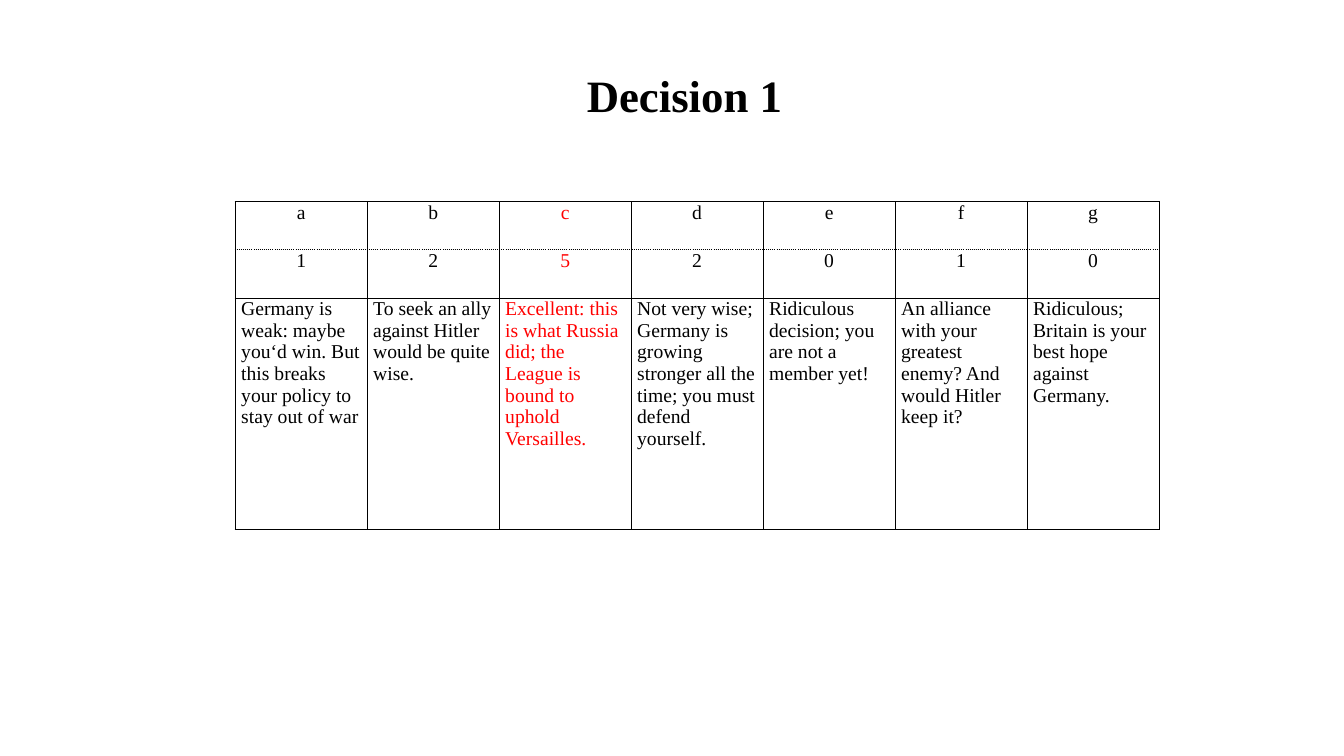
"""Build the "Decision 1" slide: a title above a table of scored options."""
from dataclasses import dataclass

from lxml import etree
from pptx import Presentation
from pptx.dml.color import RGBColor
from pptx.enum.text import MSO_ANCHOR, MSO_AUTO_SIZE, PP_ALIGN
from pptx.oxml.ns import qn
from pptx.util import Inches, Pt

CENTER, LEFT = PP_ALIGN.CENTER, PP_ALIGN.LEFT
TOP = MSO_ANCHOR.TOP
NO_RESIZE = MSO_AUTO_SIZE.NONE

TITLE_ONLY = 5
GRID_COLUMNS, GRID_ROWS = 160, 90
SLIDE_WIDTH, SLIDE_HEIGHT = Inches(13.33), Inches(7.5)
FONT = "Times New Roman"
BLACK, RED = "000000", "FF0000"
ROW_HEIGHTS = (5.75, 5.75, 27.5)
BORDER_TAGS = ("a:lnL", "a:lnR", "a:lnT", "a:lnB")
DOTTED_SIDES = {(0, "a:lnB"), (1, "a:lnT")}


@dataclass(frozen=True)
class Option:
    """One choice, its score and the comment on it."""
    letter: str
    score: int
    comment: str
    color: str = BLACK


OPTIONS = (
    Option("a", 1, "Germany is weak: maybe you‘d win. But this breaks your policy to stay out of war"),
    Option("b", 2, "To seek an ally against Hitler would be quite wise."),
    Option("c", 5, "Excellent: this is what Russia did; the League is bound to uphold Versailles.", RED),
    Option("d", 2, "Not very wise; Germany is growing stronger all the time; you must defend yourself."),
    Option("e", 0, "Ridiculous decision; you are not a member yet!"),
    Option("f", 1, "An alliance with your greatest enemy? And would Hitler keep it?"),
    Option("g", 0, "Ridiculous; Britain is your best hope against Germany."),
)


def across(columns: float) -> int:
    """Return the width of a number of grid columns."""
    return round(SLIDE_WIDTH * columns / GRID_COLUMNS)


def down(rows: float) -> int:
    """Return the height of a number of grid rows."""
    return round(SLIDE_HEIGHT * rows / GRID_ROWS)


def rgb(value: str) -> RGBColor:
    """Return the colour for a hex string."""
    return RGBColor.from_string(value)


def apply(target, values: dict) -> None:
    """Set each named attribute of the target."""
    for name, value in values.items():
        setattr(target, name, value)


def write(para, text: str, size: float, color: str, align, bold: bool = False) -> None:
    """Write one formatted span into a paragraph."""
    para.alignment = align
    span = para.add_run()
    span.text = text
    apply(span.font, {"name": FONT, "size": Pt(size), "bold": bold})
    span.font.color.rgb = rgb(color)


def add_border(cell, tag: str, dash: str) -> None:
    """Draw one side of a cell as a thin black line."""
    properties = cell._tc.get_or_add_tcPr()
    line = etree.SubElement(properties, qn(tag), w=str(Pt(1)))
    fill = etree.SubElement(line, qn("a:solidFill"))
    etree.SubElement(fill, qn("a:srgbClr"), val=BLACK)
    etree.SubElement(line, qn("a:prstDash"), val=dash)


def add_title(slide) -> None:
    """Place and format the slide title."""
    title = slide.shapes.title
    apply(title, {"left": across(31), "top": down(7), "width": across(101), "height": down(14)})
    apply(title.text_frame, {"vertical_anchor": TOP, "auto_size": NO_RESIZE,
                             "word_wrap": True, "margin_top": down(1)})
    write(title.text_frame.paragraphs[0], "Decision 1", 32, BLACK, CENTER, True)


def fill_cell(cell, row: int, text: str, color: str) -> None:
    """Write and outline one table cell."""
    apply(cell, {"margin_left": Inches(0.06), "margin_right": Inches(0.06),
                 "margin_top": 0, "margin_bottom": 0, "vertical_anchor": TOP})
    write(cell.text_frame.paragraphs[0], text, 14, color, LEFT if row == 2 else CENTER)
    for tag in BORDER_TAGS:
        add_border(cell, tag, "sysDot" if (row, tag) in DOTTED_SIDES else "solid")
    cell.fill.background()


def add_options(slide) -> None:
    """Add the table with one column for each option."""
    frame = slide.shapes.add_table(len(ROW_HEIGHTS), len(OPTIONS), across(28), down(24),
                                   across(110), down(sum(ROW_HEIGHTS)))
    table = frame.table
    apply(table, {"first_row": False, "horz_banding": False})
    for row, height in zip(table.rows, ROW_HEIGHTS):
        row.height = down(height)
    for column, option in enumerate(OPTIONS):
        for row, text in enumerate((option.letter, str(option.score), option.comment)):
            fill_cell(table.cell(row, column), row, text, option.color)


def main() -> None:
    """Create and save the deck."""
    deck = Presentation()
    apply(deck, {"slide_width": SLIDE_WIDTH, "slide_height": SLIDE_HEIGHT})
    page = deck.slides.add_slide(deck.slide_layouts[TITLE_ONLY])
    add_options(page)
    add_title(page)
    deck.save("out.pptx")


if __name__ == "__main__":
    main()
